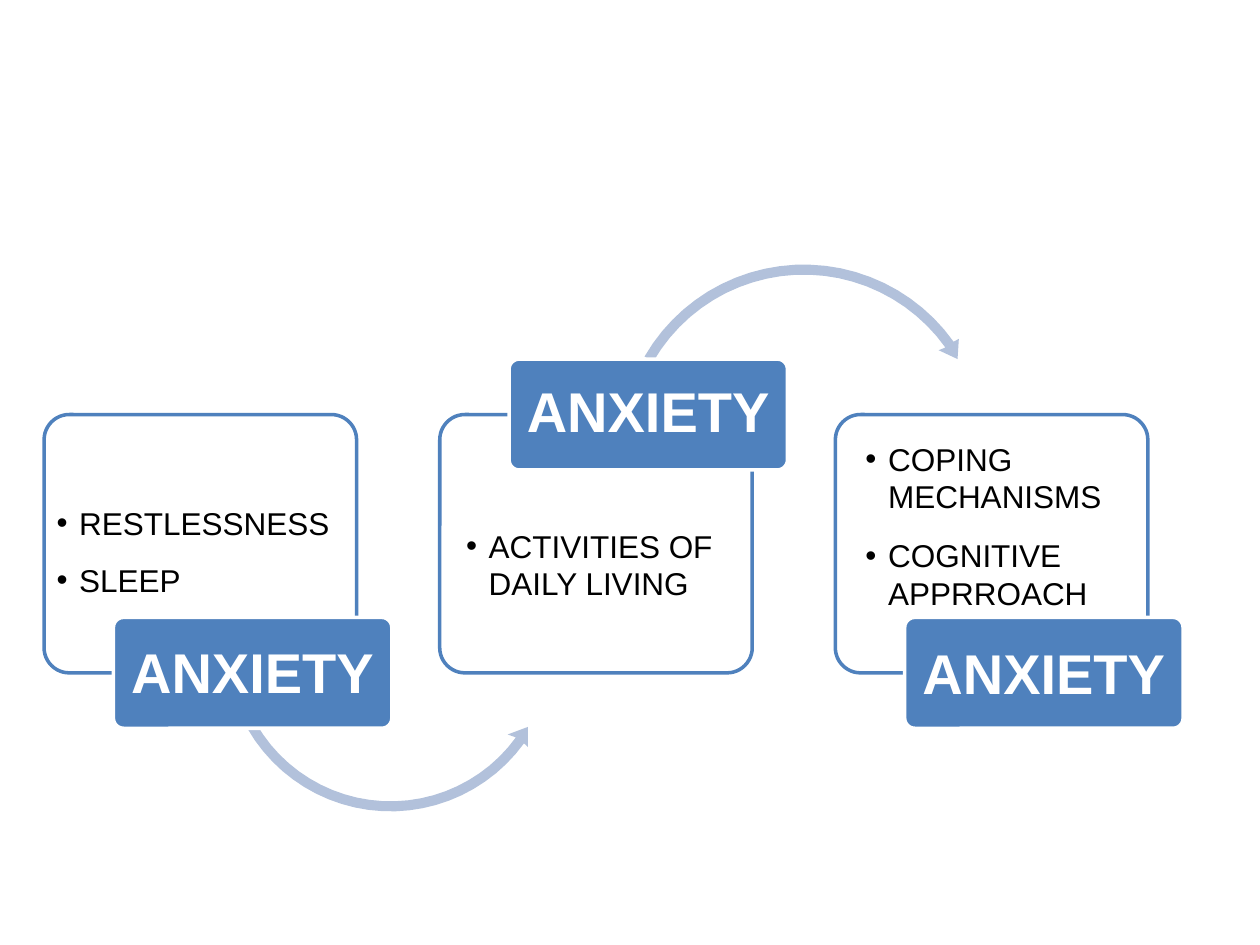
from math import cos, radians, sin

from lxml import etree
from pptx import Presentation
from pptx.dml.color import RGBColor
from pptx.enum.shapes import MSO_SHAPE
from pptx.enum.text import PP_ALIGN
from pptx.oxml.ns import qn
from pptx.util import Inches, Pt

ROUNDED = MSO_SHAPE.ROUNDED_RECTANGLE
LEFT, CENTER = PP_ALIGN.LEFT, PP_ALIGN.CENTER
BLUE = RGBColor(0x4F, 0x81, 0xBD)
PALE_BLUE = RGBColor(0xB2, 0xC1, 0xDB)
WHITE = RGBColor(0xFF, 0xFF, 0xFF)
BLACK = RGBColor(0x00, 0x00, 0x00)

# Grid: three cards in one row, each with an overlapping label
COL_LEFT, COL_STEP = 0.35, 3.14
CARD_TOP, CARD_W, CARD_H = 3.29, 2.48, 2.05
LABEL_DX, LABEL_W, LABEL_H = 0.55, 2.21, 0.88
INDENT = Inches(0.18)

prs = Presentation()
prs.slide_width, prs.slide_height = Inches(10), Inches(7.5)
s = prs.slides.add_slide(prs.slide_layouts[6])


def add_text(lines, x, y, w, h, size=18, color=BLACK, bold=False,
             align=LEFT, bullet=False, spacing=None, after=0):
    tf = s.shapes.add_textbox(Inches(x), Inches(y), Inches(w), Inches(h)).text_frame
    tf.word_wrap = True
    for i, line in enumerate(lines):
        p = tf.paragraphs[0] if i == 0 else tf.add_paragraph()
        p.alignment = align
        p.space_after = Pt(after)
        if spacing:
            p.line_spacing = spacing
        if bullet:
            pPr = p._p.get_or_add_pPr()
            pPr.set("marL", str(INDENT))
            pPr.set("indent", str(-INDENT))
            etree.SubElement(pPr, qn("a:buFont")).set("typeface", "Arial")
            etree.SubElement(pPr, qn("a:buChar")).set("char", "•")
            tabs = etree.SubElement(pPr, qn("a:tabLst"))
            etree.SubElement(tabs, qn("a:tab"), pos=str(INDENT), algn="l")
        r = p.add_run()
        r.text = line
        r.font.name, r.font.size = "Arial", Pt(size)
        r.font.bold, r.font.color.rgb = bold, color


def add_box(x, y, w, h, radius, line, fill=None):
    sp = s.shapes.add_shape(ROUNDED, Inches(x), Inches(y), Inches(w), Inches(h))
    sp.shadow.inherit = False
    sp.adjustments[0] = radius / h
    sp.line.color.rgb, sp.line.width = line, Pt(2)
    if fill is None:
        sp.fill.background()
    else:
        sp.fill.solid()
        sp.fill.fore_color.rgb = fill


# Curved arrows: centre, outer radius, start and end angle, three head corners
arrows = [
    (3.1, 5.13, 1.31, 150, 36, [(4.03, 5.83), (4.19, 5.77), (4.19, 5.93)]),
    (6.38, 3.56, 1.46, 210, 324.5, [(7.61, 2.69), (7.6, 2.85), (7.45, 2.78)]),
    None,
]
BAND, STEPS = 0.08, 24

# Label top, label text top, bullets, text x, y, height, text format
panels = [
    (4.9, 5.01, ["RESTLESSNESS", "SLEEP"], 0.35, 3.8, 0.95, {"spacing": 1.5}),
    (2.85, 2.94, ["ACTIVITIES OF DAILY LIVING"], 3.6, 4.13, 0.71, {}),
    (4.9, 5.02, ["COPING MECHANISMS", "COGNITIVE APPRROACH"], 6.77, 3.44, 1.48,
     {"after": 12}),
]

for col, (panel, arrow) in enumerate(zip(panels, arrows)):
    label_y, label_text_y, bullets, x, y, h, style = panel
    left = COL_LEFT + col * COL_STEP
    add_box(left, CARD_TOP, CARD_W, CARD_H, 0.2, BLUE)
    if arrow:
        cx, cy, radius, start, end, head = arrow
        angles = [radians(start + (end - start) * i / STEPS) for i in range(STEPS + 1)]
        outer, inner = ([(cx + r * cos(a), cy + r * sin(a)) for a in angles]
                        for r in (radius, radius - BAND))
        if col == 0:
            head = head[::-1]
        pts = [(Inches(px), Inches(py)) for px, py in outer + head + inner[::-1]]
        fb = s.shapes.build_freeform(*pts[0])
        fb.add_line_segments(pts[1:], close=True)
        sp = fb.convert_to_shape()
        sp.shadow.inherit = False
        sp.fill.solid()
        sp.fill.fore_color.rgb = PALE_BLUE
        sp.line.fill.background()
    add_box(left + LABEL_DX, label_y, LABEL_W, LABEL_H, 0.08, WHITE, BLUE)
    add_text(["ANXIETY"], left + LABEL_DX, label_text_y, LABEL_W, 0.64,
             size=32, color=WHITE, bold=True, align=CENTER)
    add_text(bullets, x, y, CARD_W, h, bullet=True, **style)

prs.save("out.pptx")
